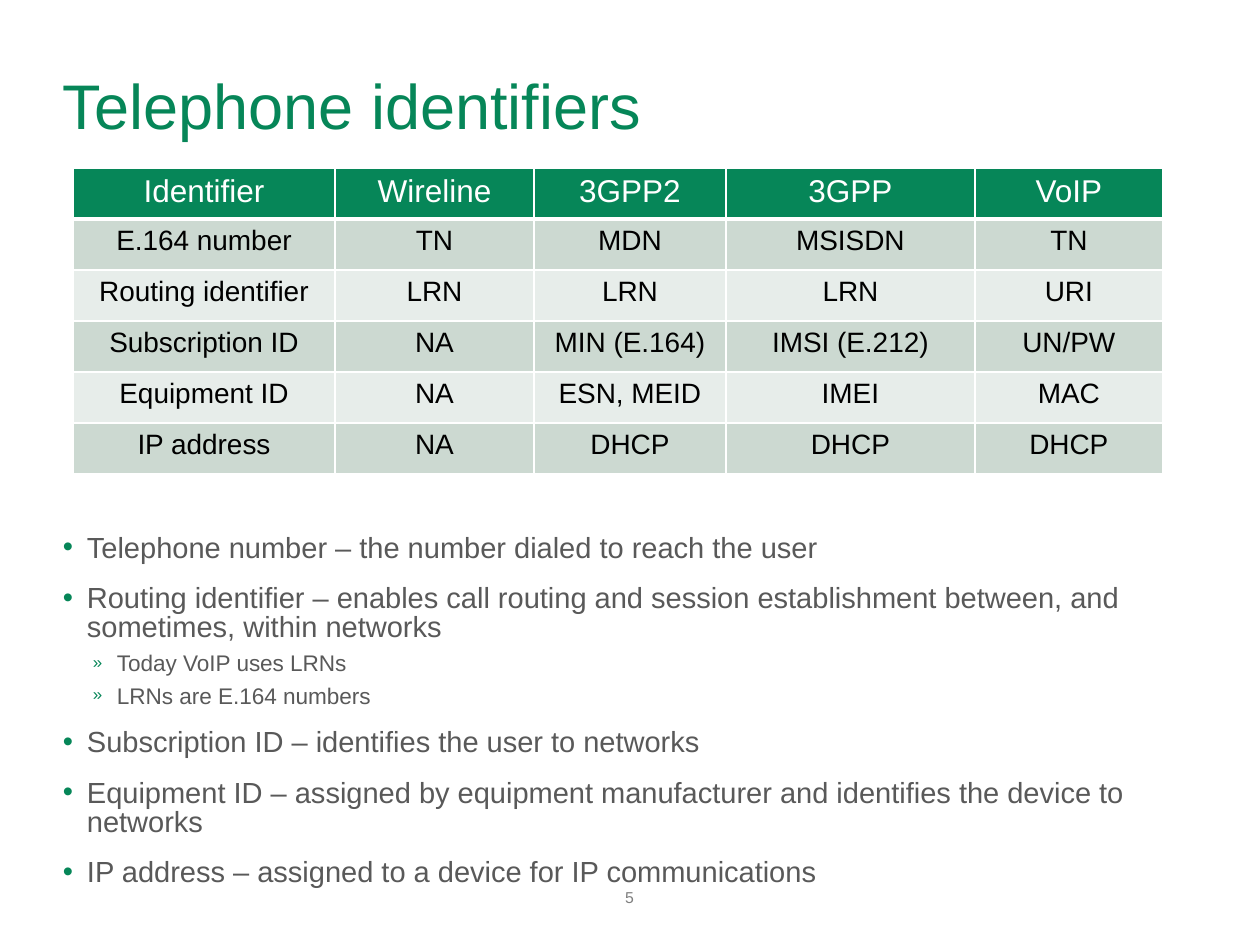
from lxml import etree
from pptx import Presentation
from pptx.dml.color import RGBColor
from pptx.enum.text import MSO_ANCHOR, PP_ALIGN
from pptx.oxml.ns import qn
from pptx.util import Pt

PX = 914400 // 126
FONT = "Arial"
GREEN = RGBColor(0x06, 0x86, 0x58)
WHITE = RGBColor(0xFF, 0xFF, 0xFF)
BLACK = RGBColor(0, 0, 0)
BODY_GRAY = RGBColor(0x59, 0x59, 0x59)
NUMBER_GRAY = RGBColor(0x7F, 0x7F, 0x7F)
BANDS = [RGBColor(0xCC, 0xD9, 0xD1), RGBColor(0xE7, 0xED, 0xEA)]

TITLE = "Telephone identifiers"
SLIDE_NUMBER = "5"
IDENTIFIERS = [
    ("Identifier", "Wireline", "3GPP2", "3GPP", "VoIP"),
    ("E.164 number", "TN", "MDN", "MSISDN", "TN"),
    ("Routing identifier", "LRN", "LRN", "LRN", "URI"),
    ("Subscription ID", "NA", "MIN (E.164)", "IMSI (E.212)", "UN/PW"),
    ("Equipment ID", "NA", "ESN, MEID", "IMEI", "MAC"),
    ("IP address", "NA", "DHCP", "DHCP", "DHCP"),
]
COLUMN_WIDTHS = [262, 199, 192, 249, 188]
ROW_HEIGHT = 51
DEFINITIONS = [
    (0, "Telephone number – the number dialed to reach the user"),
    (0, "Routing identifier – enables call routing and session establishment "
        "between, and sometimes, within networks"),
    (1, "Today VoIP uses LRNs"),
    (1, "LRNs are E.164 numbers"),
    (0, "Subscription ID – identifies the user to networks"),
    (0, "Equipment ID – assigned by equipment manufacturer and identifies "
        "the device to networks"),
    (0, "IP address – assigned to a device for IP communications"),
]
LEVELS = [
    dict(bullet="•", bullet_size=100, margin=24, size=16.6, before=12, spacing=0.84),
    dict(bullet="»", bullet_size=75, margin=54, size=12.9, before=3, spacing=1.0),
]
HANGING = 24


def add_run(paragraph, text, size, color):
    run = paragraph.add_run()
    run.text = text
    run.font.name = FONT
    run.font.size = Pt(size)
    run.font.color.rgb = color


def add_text_frame(slide, left, top, width, height, anchor=MSO_ANCHOR.TOP):
    box = slide.shapes.add_textbox(left * PX, top * PX, width * PX, height * PX)
    frame = box.text_frame
    frame.word_wrap = True
    frame.vertical_anchor = anchor
    frame.margin_left = frame.margin_right = 0
    frame.margin_top = frame.margin_bottom = 0
    return frame


def set_bullet(paragraph, level):
    properties = paragraph._p.get_or_add_pPr()
    properties.set("marL", str(level["margin"] * PX))
    properties.set("indent", str(-HANGING * PX))
    color = etree.SubElement(properties, qn("a:buClr"))
    etree.SubElement(color, qn("a:srgbClr"), val=str(GREEN))
    etree.SubElement(properties, qn("a:buSzPct"), val=str(level["bullet_size"] * 1000))
    etree.SubElement(properties, qn("a:buFont"), typeface=FONT)
    etree.SubElement(properties, qn("a:buChar"), char=level["bullet"])


def set_borders(cell, bottom_width):
    """Draw white cell borders, 1 pt wide except at the bottom; call before filling."""
    properties = cell._tc.get_or_add_tcPr()
    for side, width in (("L", 1), ("R", 1), ("T", 1), ("B", bottom_width)):
        line = etree.SubElement(properties, qn(f"a:ln{side}"), w=str(Pt(width)))
        fill = etree.SubElement(line, qn("a:solidFill"))
        etree.SubElement(fill, qn("a:srgbClr"), val=str(WHITE))


def add_identifier_table(slide, left, top):
    row_count = len(IDENTIFIERS)
    table = slide.shapes.add_table(
        row_count, len(COLUMN_WIDTHS), left * PX, top * PX,
        sum(COLUMN_WIDTHS) * PX, row_count * ROW_HEIGHT * PX).table
    for column, width in zip(table.columns, COLUMN_WIDTHS):
        column.width = width * PX
    for row_index, values in enumerate(IDENTIFIERS):
        table.rows[row_index].height = ROW_HEIGHT * PX
        is_header = row_index == 0
        for column_index, value in enumerate(values):
            cell = table.cell(row_index, column_index)
            set_borders(cell, 3 if is_header else 1)
            cell.fill.solid()
            cell.fill.fore_color.rgb = GREEN if is_header else BANDS[(row_index - 1) % 2]
            paragraph = cell.text_frame.paragraphs[0]
            paragraph.alignment = PP_ALIGN.CENTER
            add_run(paragraph, value, 18 if is_header else 16,
                    WHITE if is_header else BLACK)


def add_definitions(slide):
    frame = add_text_frame(slide, 63, 535, 1134, 343)
    for index, (depth, text) in enumerate(DEFINITIONS):
        level = LEVELS[depth]
        paragraph = frame.add_paragraph() if index else frame.paragraphs[0]
        set_bullet(paragraph, level)
        paragraph.level = depth
        paragraph.line_spacing = level["spacing"]
        if index:
            paragraph.space_before = Pt(level["before"])
        add_run(paragraph, text, level["size"], BODY_GRAY)


def main():
    presentation = Presentation()
    presentation.slide_width = 1260 * PX
    presentation.slide_height = 945 * PX
    slide = presentation.slides.add_slide(presentation.slide_layouts[6])

    title = add_text_frame(slide, 63, 50, 1134, 92, MSO_ANCHOR.BOTTOM)
    add_run(title.paragraphs[0], TITLE, 36, GREEN)

    number = add_text_frame(slide, 443, 849, 373, 96, MSO_ANCHOR.MIDDLE)
    number.paragraphs[0].alignment = PP_ALIGN.CENTER
    add_run(number.paragraphs[0], SLIDE_NUMBER, 9, NUMBER_GRAY)

    add_definitions(slide)
    add_identifier_table(slide, 73, 168)
    presentation.save("out.pptx")


if __name__ == "__main__":
    main()
